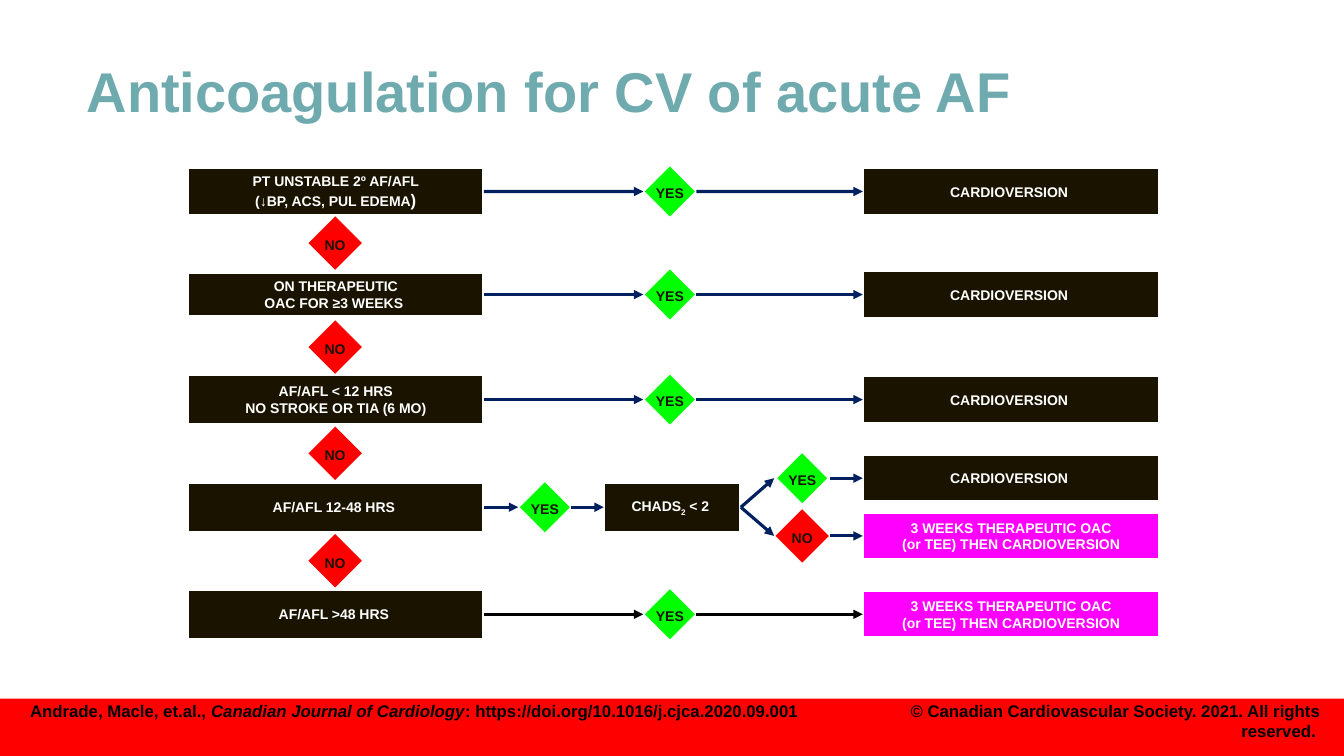
"""Builds a decision-flow slide on anticoagulation before cardioversion of acute AF."""
from lxml import etree
from pptx import Presentation
from pptx.dml.color import RGBColor
from pptx.enum.shapes import MSO_CONNECTOR, MSO_SHAPE
from pptx.enum.text import MSO_ANCHOR, PP_ALIGN
from pptx.oxml.ns import qn
from pptx.util import Pt

RECT, STRAIGHT = MSO_SHAPE.RECTANGLE, MSO_CONNECTOR.STRAIGHT
LEFT, CENTER, RIGHT = PP_ALIGN.LEFT, PP_ALIGN.CENTER, PP_ALIGN.RIGHT
TOP, MIDDLE = MSO_ANCHOR.TOP, MSO_ANCHOR.MIDDLE
LEFT_SIDE, RIGHT_SIDE = 1, 3

COLORS = {"title": "6FAAAF", "dark": "1A1300", "white": "FFFFFF", "black": "000000",
          "navy": "002060", "yes": "00FF00", "no": "FF0000", "delay": "FF00FF",
          "footer": "FF0000"}

TITLE = "Anticoagulation for CV of acute AF"
CITATION = [("Andrade, Macle, et.al., ", {}),
            ("Canadian Journal of Cardiology", {"italic": True}),
            (": https://doi.org/10.1016/j.cjca.2020.09.001", {})]
COPYRIGHT = "© Canadian Cardiovascular Society. 2021. All rights reserved. "

CARDIOVERT = (["CARDIOVERSION "], "dark")
DELAY = (["3 WEEKS THERAPEUTIC OAC", "(or TEE) THEN CARDIOVERSION"], "delay")
RISK_SCORE = [[("CHADS", {}), ("2", {"baseline": -25000}), (" < 2 ", {})]]

# Each step: question, row centre, box height, outcome, arrow colour
STEPS = [
    (["PT UNSTABLE 2º AF/AFL", [("(↓BP, ACS, PUL EDEMA", {}), (")", {"size": 12})]],
     136.8, 33.8, CARDIOVERT, "navy"),
    (["ON THERAPEUTIC", "OAC FOR ≥3 WEEKS "], 210.4, 31.7, CARDIOVERT, "navy"),
    (["AF/AFL < 12 HRS", "NO STROKE OR TIA (6 MO)"], 285.4, 36, CARDIOVERT, "navy"),
    (["AF/AFL 12-48 HRS "], 362.3, 36, None, "navy"),
    (["AF/AFL >48 HRS "], 438.8, 36, DELAY, "black"),
]
BRANCHES = [("YES", 341.6, CARDIOVERT), ("NO", 382.8, DELAY)]

QUESTION_X, OUTCOME_X, BOX_W, OUTCOME_H = 134, 616.3, 211.7, 33.8
RISK_X, RISK_W, RISK_H = 431.3, 97.9, 36
NO_X, YES_X, RISK_YES_X, BRANCH_X = 239.4, 478.5, 389.2, 573
DIAMONDS = {"YES": ("yes", 25.2, 34.6), "NO": ("no", 27, 29.5)}
DIAMOND_GAP = 19
LABEL_H, LABEL_DROP = 19.4, 1.4


def color(key):
    return RGBColor.from_string(COLORS[key])


def write(shape, paragraphs, size=10, ink="white", align=CENTER, anchor=MIDDLE,
          wrap=True, spacing=None):
    frame = shape.text_frame
    frame.word_wrap = wrap
    frame.vertical_anchor = anchor
    for index, content in enumerate(paragraphs):
        paragraph = frame.add_paragraph() if index else frame.paragraphs[0]
        paragraph.alignment = align
        if spacing:
            paragraph.line_spacing = spacing
        for text, style in [(content, {})] if isinstance(content, str) else content:
            run = paragraph.add_run()
            run.text = text
            run.font.name = "Arial"
            run.font.bold = True
            run.font.italic = style.get("italic")
            run.font.size = Pt(style.get("size", size))
            run.font.color.rgb = color(ink)
            if "baseline" in style:
                run.font._element.set("baseline", str(style["baseline"]))


def add_rect(shapes, left, top, width, height, fill):
    rect = shapes.add_shape(RECT, Pt(left), Pt(top), Pt(width), Pt(height))
    rect.shadow.inherit = False
    rect.fill.solid()
    rect.fill.fore_color.rgb = color(fill)
    rect.line.fill.background()
    return rect


def add_box(left, center_y, width, height, lines, fill="dark", wrap=True):
    box = add_rect(slide.shapes, left, center_y - height / 2, width, height, fill)
    box.line.color.rgb = color("white")
    box.line.width = Pt(2.25)
    write(box, lines, wrap=wrap)
    return box


def add_outcome(center_y, outcome):
    lines, fill = outcome
    return add_box(OUTCOME_X, center_y, BOX_W, OUTCOME_H, lines, fill)


def add_text(shapes, left, top, width, height, paragraphs, **style):
    label = shapes.add_textbox(Pt(left), Pt(top), Pt(width), Pt(height))
    write(label, paragraphs, **style)


def add_diamond(answer, x, y):
    fill, side, label_w = DIAMONDS[answer]
    group = slide.shapes.add_group_shape()
    add_rect(group.shapes, x - side / 2, y - side / 2, side, side, fill).rotation = 45
    add_text(group.shapes, x - label_w / 2, y - LABEL_H / 2 + LABEL_DROP, label_w, LABEL_H,
             [answer], ink="dark", anchor=TOP, wrap=False)


def add_arrow(start, end, ink="navy", source=None, target=None):
    arrow = slide.shapes.add_connector(STRAIGHT, *map(Pt, start + end))
    if source:
        arrow.begin_connect(source, RIGHT_SIDE)
    if target:
        arrow.end_connect(target, LEFT_SIDE)
    arrow.line.color.rgb = color(ink)
    arrow.line.width = Pt(2.25)
    etree.SubElement(arrow.line._get_or_add_ln(), qn("a:tailEnd"), type="triangle")
    etree.SubElement(arrow._element.spPr, qn("a:effectLst"))


def add_yes_path(x, y, source, target, ink):
    add_arrow((QUESTION_X + BOX_W, y), (x - DIAMOND_GAP, y), ink, source=source)
    add_diamond("YES", x, y)
    add_arrow((x + DIAMOND_GAP, y), (target.left.pt, y), ink, target=target)


prs = Presentation()
prs.slide_width, prs.slide_height = Pt(960), Pt(540)
slide = prs.slides.add_slide(prs.slide_layouts[5])

add_rect(slide.shapes, 0, 499, 960, 41, "footer")
add_text(slide.shapes, 14.4, 496.8, 576, 21.6, [CITATION],
         size=12, ink="black", align=LEFT, anchor=TOP)
add_text(slide.shapes, 626.4, 496.8, 324, 21.6, [COPYRIGHT],
         size=12, ink="black", align=RIGHT, anchor=TOP)

title = slide.shapes.title
title.left, title.top, title.width, title.height = Pt(54.7), Pt(28.8), Pt(850.3), Pt(77)
write(title, [TITLE], size=40, ink="title", align=LEFT, spacing=0.9)

for question, y, height, outcome, ink in STEPS:
    question_box = add_box(QUESTION_X, y, BOX_W, height, question)
    if outcome:
        add_yes_path(YES_X, y, question_box, add_outcome(y, outcome), ink)
        continue
    risk_box = add_box(RISK_X, y, RISK_W, RISK_H, RISK_SCORE, wrap=False)
    add_yes_path(RISK_YES_X, y, question_box, risk_box, ink)
    for answer, branch_y, branch_outcome in BRANCHES:
        outcome_box = add_outcome(branch_y, branch_outcome)
        add_arrow((RISK_X + RISK_W, y), (BRANCH_X - 20, branch_y), ink, source=risk_box)
        add_diamond(answer, BRANCH_X, branch_y)
        add_arrow((BRANCH_X + 20, branch_y), (OUTCOME_X, branch_y), ink, target=outcome_box)

for upper, lower in zip(STEPS, STEPS[1:]):
    add_diamond("NO", NO_X, (upper[1] + lower[1]) / 2)

prs.save("out.pptx")
